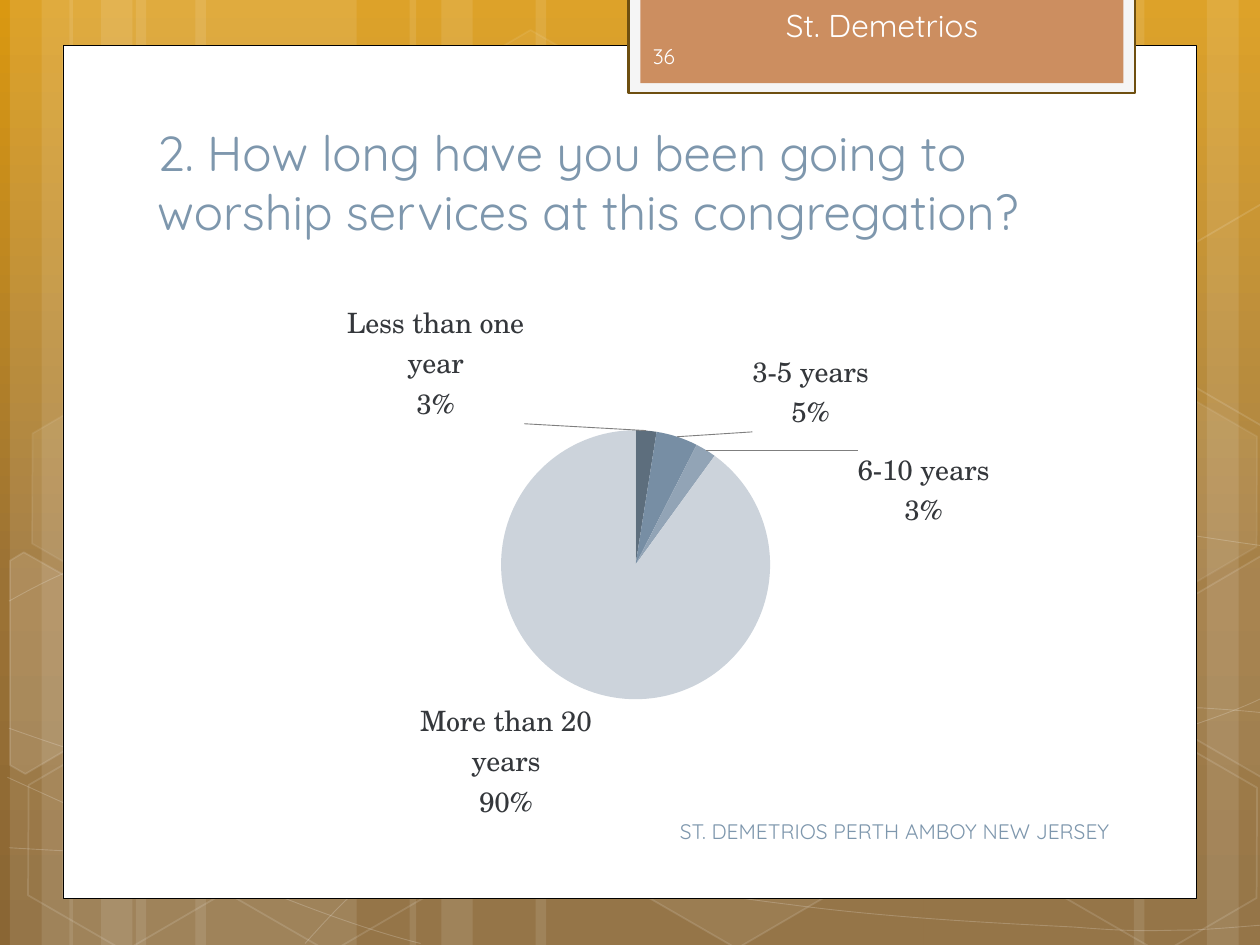
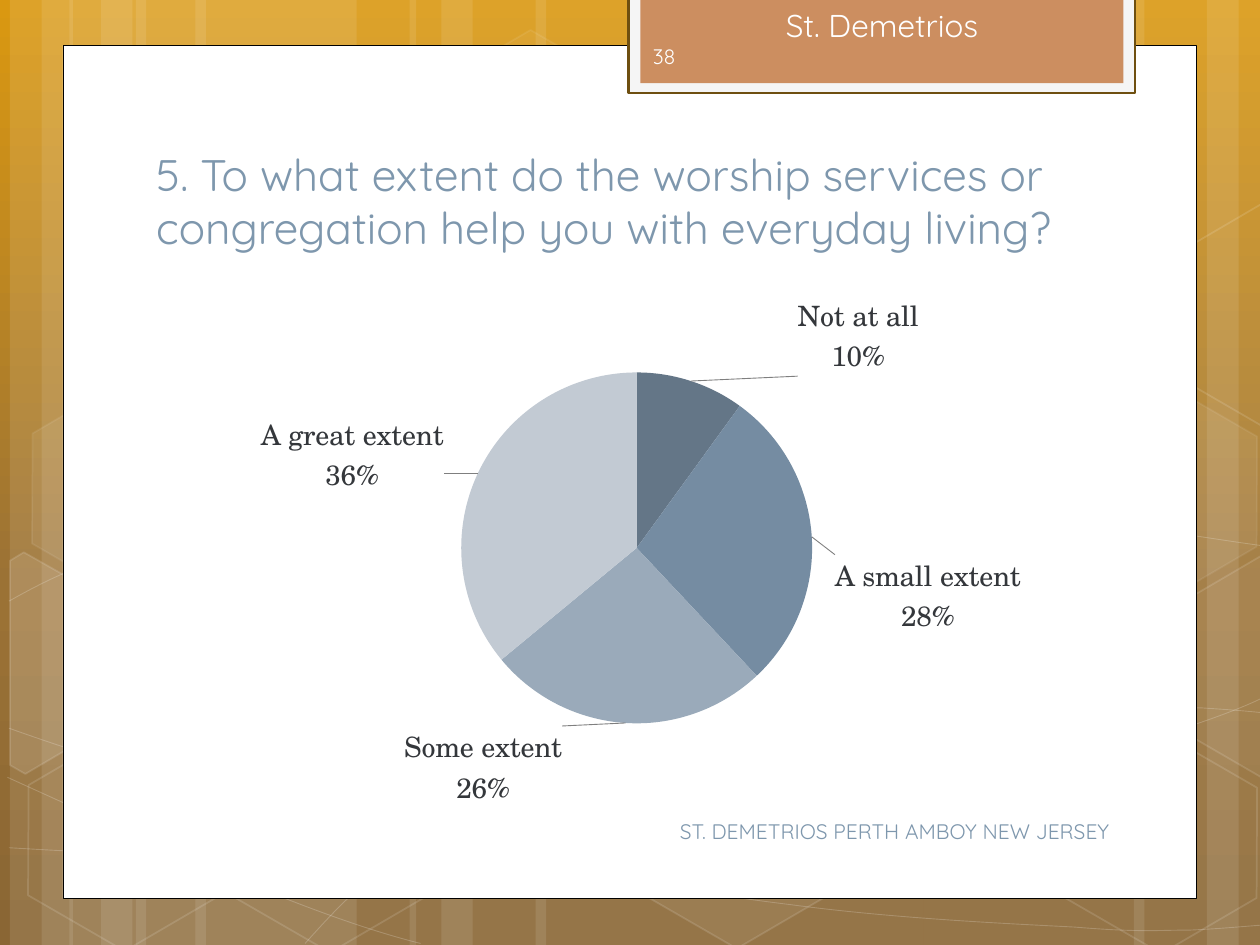
from copy import deepcopy
from math import cos, radians, sin

from lxml import etree
from pptx import Presentation
from pptx import util as u
from pptx.chart.data import CategoryChartData
from pptx.dml.color import RGBColor
from pptx.enum import chart as charts, shapes, text
from pptx.oxml import parse_xml
from pptx.oxml.ns import nsdecls, qn

WIDTH, HEIGHT = 25.4, 19.05
WHITE, BLUE, COPPER, INK, LEADER_GREY = "FFFFFF", "7E97AD", "CC8E60", "34373B", "7F7F7F"
HEADING_FONT, LABEL_FONT = "Quicksand", "TeX Gyre Schola"
SKY = [(0, "DA9811"), (0.62, "9B7235"), (1, "8A6634")]

# Stripes come in threes: left and width of each.
THIN, MID, WIDE = 1.27, 2.11, 4.45
STRIPES = [(18.62, WIDE), (24.33, THIN), (22.86, MID)]
for fan_left, fan_width in [(2.74, WIDE), (3.94, WIDE), (10.8, 7.82)]:
    STRIPES += [(fan_left, fan_width), (fan_left - 2.54, THIN), (fan_left - 1.9, MID)]

# Each curve is a start point followed by Bezier triples.
CURVES = [
    [(0.18, 17.09), (1.55, 17.17), (2.92, 17.25), (4.83, 17.22), (6.73, 17.2),
     (9.09, 17.15), (11.63, 16.89), (14.17, 16.64), (17.78, 16.15), (20.12, 15.67),
     (22.43, 15.19), (24.82, 14.43), (25.58, 14)],
    [(0.18, 12.12), (0.91, 11.71), (1.65, 11.33), (3.07, 10.95), (4.52, 10.57),
     (6.58, 10.01), (8.81, 9.83), (11.07, 9.65), (13.82, 9.63), (16.61, 9.83),
     (19.41, 10.03), (24.05, 10.82), (25.58, 11.02)],
    [(0.15, 15.67), (3.23, 17.07), (6.27, 18.47), (8.48, 19.02)],
    [(0.18, 14.68), (0.97, 14.96), (1.78, 15.24), (3.25, 15.65), (4.72, 16.03),
     (6.93, 16.66), (9.07, 17.09), (11.18, 17.53), (13.84, 17.98), (15.95, 18.24),
     (18.06, 18.52), (20.32, 18.62), (21.67, 18.69), (22.99, 18.8), (23.34, 18.75),
     (24, 18.75), (24.66, 18.72), (25.12, 18.67), (25.58, 18.64)],
    [(6.15, 19.02), (6.6, 18.52), (7.06, 18.01), (7.67, 17.55), (8.28, 17.09),
     (9.14, 16.59), (9.86, 16.23), (10.57, 15.88), (11, 15.72), (11.94, 15.47),
     (12.85, 15.21), (14.55, 14.86), (15.44, 14.68), (16.36, 14.5), (16.48, 14.5),
     (17.27, 14.45), (18.06, 14.38), (19.3, 14.3), (20.17, 14.27), (21.06, 14.25),
     (22.5, 14.27), (22.5, 14.27), (22.9, 14.27), (23.8, 14.27), (24.21, 14.27),
     (24.66, 14.3), (25.12, 14.33), (25.55, 14.38)],
]

TILT = 30
# Left, top, fill opacity, line opacity.
HEXAGONS = [
    (8.48, 0.91, 4, 8), (12.62, 14.96, 6, 12), (0.28, 15.01, 0, 12), (0.36, 7.92, 7, 8),
    (4.42, 15.04, 0, 12), (19.13, 11.51, 10, 12), (21.18, 15.06, 0, 12), (21.18, 7.98, 7, 8),
]
# Hexagons cut by the slide's edge: centre, corners as seen, fill opacity.
LEFT_CUT = [(0.2, 11.3), (0.48, 11.13), (2.44, 12.24), (2.41, 14.48), (0.51, 15.6), (0.2, 15.42)]
RIGHT_CUT = [(23.52, 12.32), (25.43, 11.2), (25.63, 11.33),
             (25.63, 15.57), (25.45, 15.67), (23.52, 14.55)]
RISE = 7.09
CUT_HEXAGONS = [
    ((0.91, 13.59), LEFT_CUT, 10),
    ((25.02, 13.21), RIGHT_CUT, 4),
    ((25.02, 13.21 - RISE), [(x, y - RISE) for x, y in RIGHT_CUT], 0),
]


def rgb(hex_colour):
    return RGBColor.from_string(hex_colour)


def paint(fill, colour, opacity=100):
    """Fill with a colour at an opacity in percent; 0 means no fill."""
    if not opacity:
        fill.background()
        return
    fill.solid()
    fill.fore_color.rgb = rgb(colour)
    if opacity < 100:
        solid = fill._xPr.find(qn("a:solidFill") + "/" + qn("a:srgbClr"))
        etree.SubElement(solid, qn("a:alpha"), val=str(opacity * 1000))


def untilt(points, centre):
    """Turn points back by the tilt that the shape's rotation will add."""
    c, s = cos(radians(TILT)), sin(radians(TILT))
    x0, y0 = centre
    return [(x0 + (x - x0) * c + (y - y0) * s, y0 - (x - x0) * s + (y - y0) * c)
            for x, y in points]


def bend(shape):
    """Turn each three line segments of a freeform into one Bezier segment."""
    outline = next(shape._element.iter(qn("a:path")))
    lines = outline.findall(qn("a:lnTo"))
    for first in range(0, len(lines), 3):
        curve = etree.SubElement(outline, qn("a:cubicBezTo"))
        for line in lines[first:first + 3]:
            curve.append(line[0])
            outline.remove(line)


def manual_layout(x, y, size=None):
    """Layout in percent of the chart: an offset, or a plot frame if a size is given."""
    values = [("x", x / 100), ("y", y / 100)]
    if size:
        values = [("layoutTarget", "inner"), ("xMode", "edge"), ("yMode", "edge"),
                  *values, ("w", size[0] / 100), ("h", size[1] / 100)]
    inner = "".join(f'<c:{tag} val="{value}"/>' for tag, value in values)
    return parse_xml(f'<c:layout {nsdecls("c")}><c:manualLayout>{inner}</c:manualLayout></c:layout>')


class Deck:
    def __init__(self):
        self.presentation = Presentation()
        self.presentation.slide_width = u.Cm(WIDTH)
        self.presentation.slide_height = u.Cm(HEIGHT)
        self.slide = None

    def finish(self, shape, fill, line, fill_opacity=100, line_opacity=100, line_width=1):
        shape.shadow.inherit = False
        paint(shape.fill, fill, fill_opacity)
        paint(shape.line.fill, line, line_opacity)
        if line_opacity:
            shape.line.width = u.Pt(line_width)

    def shape(self, kind, left, top, width, height, fill, line=WHITE, **style):
        shape = self.slide.shapes.add_shape(
            kind, u.Cm(left), u.Cm(top), u.Cm(width), u.Cm(height))
        self.finish(shape, fill, line, **style)
        return shape

    def outline(self, points, closed, **style):
        (start_x, start_y), *rest = points
        builder = self.slide.shapes.build_freeform(u.Cm(start_x), u.Cm(start_y))
        builder.add_line_segments([(u.Cm(x), u.Cm(y)) for x, y in rest], close=closed)
        shape = builder.convert_to_shape()
        self.finish(shape, WHITE, WHITE, **style)
        return shape

    def text(self, words, left, top, width, height, size, colour,
             align=text.PP_ALIGN.LEFT, anchor=text.MSO_ANCHOR.TOP):
        box = self.slide.shapes.add_textbox(u.Cm(left), u.Cm(top), u.Cm(width), u.Cm(height))
        frame = box.text_frame
        frame.word_wrap = True
        frame.vertical_anchor = anchor
        paragraph = frame.paragraphs[0]
        paragraph.text = words
        paragraph.alignment = align
        paragraph.font.name = HEADING_FONT
        paragraph.font.size = u.Pt(size)
        paragraph.font.color.rgb = rgb(colour)

    def background(self):
        fill = self.slide.background.fill
        fill.gradient()
        fill.gradient_angle = 270
        first = fill.gradient_stops[0]._gs
        first.addnext(deepcopy(first))
        for stop, (position, colour) in zip(fill.gradient_stops, SKY):
            stop.position = position
            stop.color.rgb = rgb(colour)

    def scenery(self):
        rectangle, hexagon = shapes.MSO_SHAPE.RECTANGLE, shapes.MSO_SHAPE.HEXAGON
        for left, width in STRIPES:
            self.shape(rectangle, left, 0, width, HEIGHT, WHITE, fill_opacity=10, line_opacity=0)
        for curve in CURVES:
            bend(self.outline(curve, False, fill_opacity=0, line_opacity=20, line_width=0.5))
        for left, top, fill_opacity, line_opacity in HEXAGONS:
            cell = self.shape(hexagon, left, top, 4.45, 3.86, WHITE,
                              fill_opacity=fill_opacity, line_opacity=line_opacity)
            cell.rotation = TILT
            cell.adjustments[0] = 0.285
        for centre, corners, fill_opacity in CUT_HEXAGONS:
            cell = self.outline(untilt(corners, centre), True,
                                fill_opacity=fill_opacity, line_opacity=12)
            cell.rotation = TILT
        self.shape(rectangle, 1.27, 0.91, 22.86, 17.2, WHITE, "000000", line_width=0.5)
        self.shape(rectangle, 12.67, -0.05, 10.21, 1.93, "F5F5F5", "6E4F10", line_width=1.25)
        self.shape(rectangle, 12.91, -0.05, 9.74, 1.73, COPPER, line_opacity=0)

    def question_slide(self, number, question, title_at, title_size):
        self.slide = self.presentation.slides.add_slide(self.presentation.slide_layouts[6])
        self.background()
        self.scenery()
        middle = text.MSO_ANCHOR.MIDDLE
        self.text("St. Demetrios", 15.24, 0, 5.08, 1.8, 18, WHITE, text.PP_ALIGN.CENTER)
        self.text(question, *title_at, 19.51, 3.18, title_size, BLUE)
        self.text("ST. DEMETRIOS PERTH AMBOY NEW JERSEY", 12.89, 16.24, 9.73, 1.02, 12, BLUE,
                  text.PP_ALIGN.RIGHT, middle)
        self.text(str(number), 12.91, 0.62, 3.71, 1.02, 12, "FEFEFE", anchor=middle)

    def pie(self, left, top, plot, answers):
        """Draw answers given as (name, value, slice colour, label offset or None)."""
        data = CategoryChartData()
        data.categories = [name for name, *_ in answers]
        data.add_series("Series 1", [value for _, value, *_ in answers])
        chart = self.slide.shapes.add_chart(
            charts.XL_CHART_TYPE.PIE, u.Cm(left), u.Cm(top), u.Cm(19.89), u.Cm(11.23), data).chart
        chart.has_title = chart.has_legend = False
        chart.font.name = HEADING_FONT
        chart.font.size = u.Pt(18)
        chart.font.color.rgb = rgb("000000")

        plot_area = chart._chartSpace.chart.plotArea
        for old_layout in plot_area.findall(qn("c:layout")):
            plot_area.remove(old_layout)
        x, y, *size = plot
        plot_area.insert(0, manual_layout(x, y, size))

        series = chart.plots[0].series[0]
        for index, (_, _, colour, _) in enumerate(answers):
            paint(series.points[index].format.fill, colour)
        self.pie_labels(series.data_labels, answers)

    def pie_labels(self, labels, answers):
        labels.font.name = LABEL_FONT
        labels.font.size = u.Pt(16)
        labels.font.color.rgb = rgb(INK)
        labels.number_format = "0%"
        labels.number_format_is_linked = False
        labels.position = charts.XL_LABEL_POSITION.OUTSIDE_END
        labels.show_category_name = labels.show_percentage = True
        labels.show_value = False
        shared = labels._element
        separator = etree.Element(qn("c:separator"))
        separator.text = "\n"
        shared.find(qn("c:showBubbleSize")).addnext(separator)

        settings = [part for part in shared if part.tag != qn("c:showLeaderLines")]
        own_labels = []
        for index, (_, value, _, offset) in enumerate(answers):
            if value and not offset:
                continue
            label = etree.Element(qn("c:dLbl"))
            etree.SubElement(label, qn("c:idx"), val=str(index))
            if value:
                label.append(manual_layout(*offset))
                label.extend(deepcopy(settings))
            else:
                etree.SubElement(label, qn("c:delete"), val="1")
            own_labels.append(label)
        shared[:0] = own_labels
        shared.append(parse_xml(
            f'<c:leaderLines {nsdecls("c", "a")}><c:spPr><a:ln w="6350"><a:solidFill>'
            f'<a:srgbClr val="{LEADER_GREY}"/></a:solidFill></a:ln></c:spPr></c:leaderLines>'))


def main():
    deck = Deck()

    deck.question_slide(
        36, "2. How long have you been going to worship services at this congregation?",
        (2.92, 2.34), 28)
    deck.pie(2.74, 5.72, (37, 26.3, 27.3, 48.3), [
        ("Less than one year", 2.5, "5D6E7D", (-21.4, 0.1)),
        ("1-2 years", 0, "6B7F91", None),
        ("3-5 years", 5, "778EA4", (7.4, 0.4)),
        ("6-10 years", 2.5, "92A4B6", (15, 15.5)),
        ("11-20 years", 0, "AFBCC9", None),
        ("More than 20 years", 90, "CCD3DB", None),
    ])

    deck.question_slide(
        38, "5. To what extent do the worship services or congregation help you "
            "with everyday living?",
        (2.9, 2.84), 25.2)
    deck.pie(2.97, 5.51, (31.8, 17.8, 35.6, 63), [
        ("Not at all", 10, "647687", (10.6, 0.4)),
        ("A small extent", 28, "758CA2", (1.6, 10.6)),
        ("Some extent", 26, "9AAABA", (-14.4, -0.8)),
        ("A great extent", 36, "C2CAD3", (-2.8, 4.5)),
    ])

    deck.presentation.save("out.pptx")


if __name__ == "__main__":
    main()
